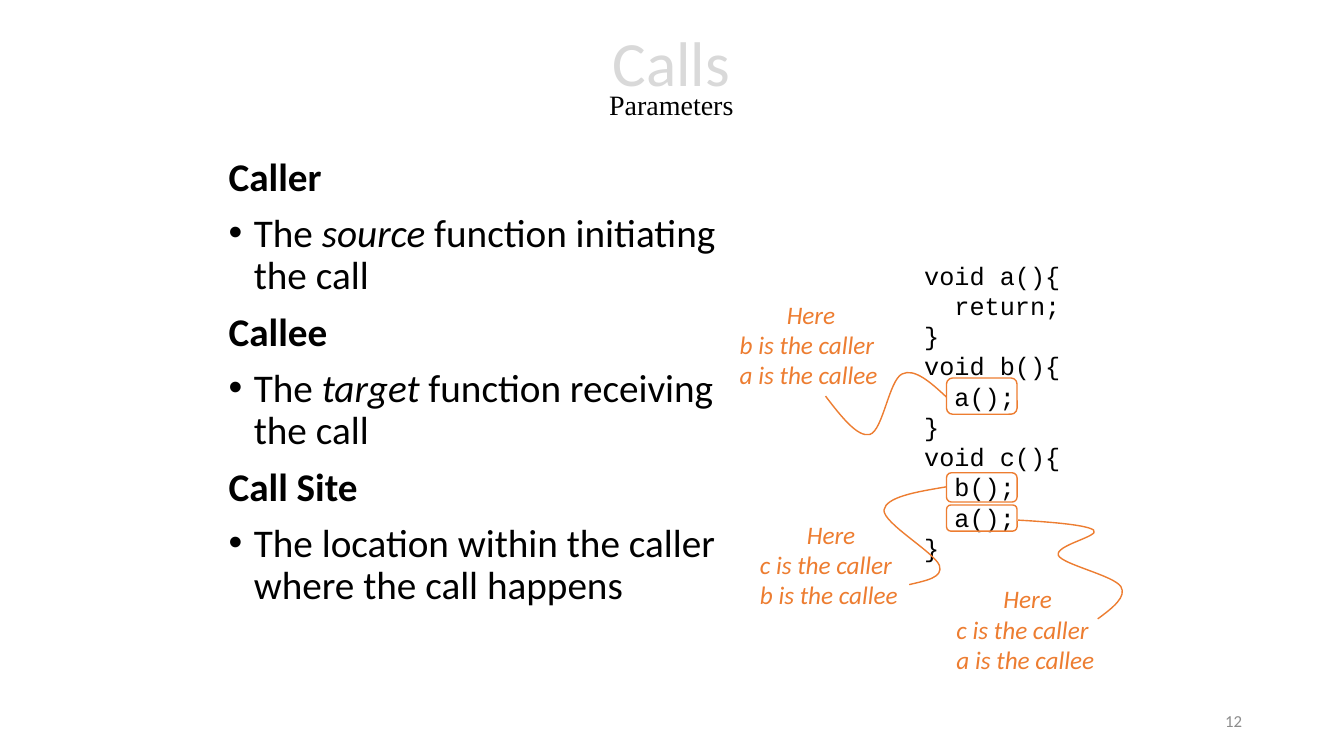
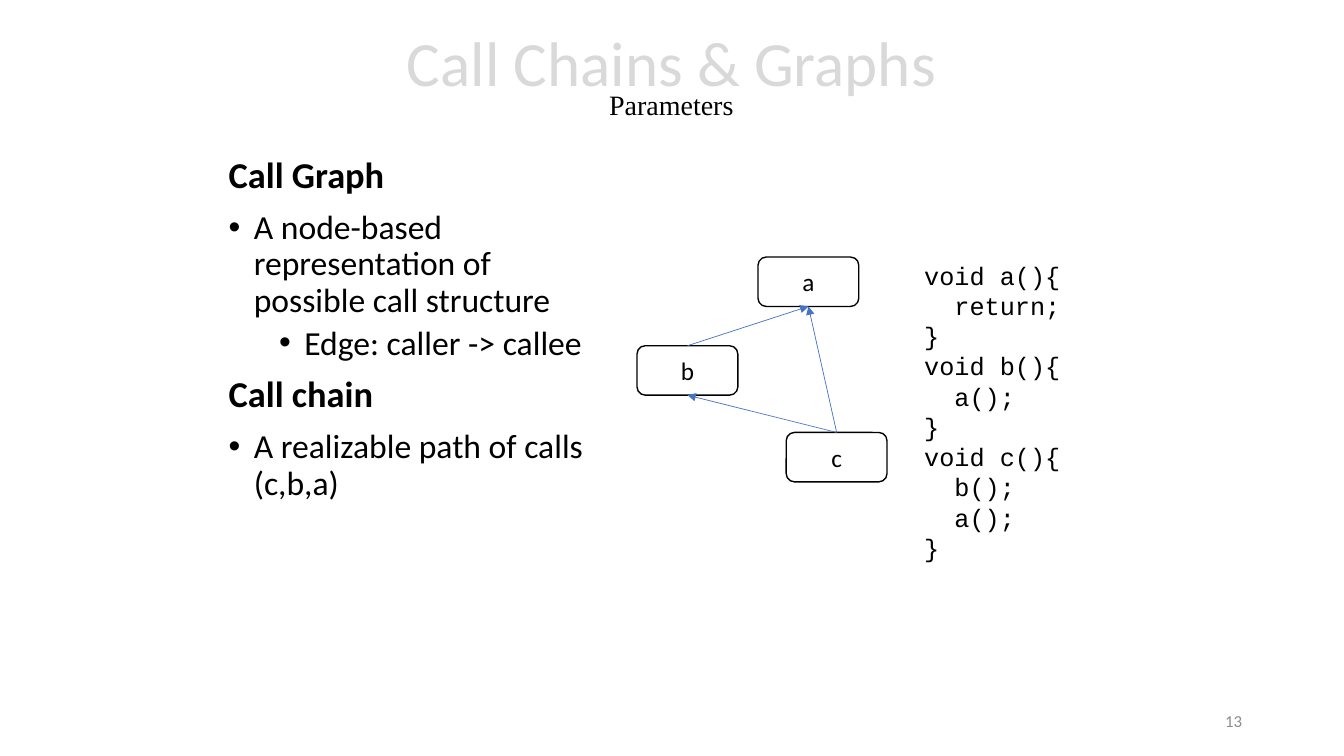
import pptx
import pptx.util
import pptx.dml.color
import pptx.enum.text
import pptx.enum.shapes
import pptx.oxml
import pptx.oxml.ns

Align = pptx.enum.text.PP_ALIGN
Anchor = pptx.enum.text.MSO_ANCHOR
Shape = pptx.enum.shapes.MSO_SHAPE
qn = pptx.oxml.ns.qn

INK, PALE, GREY = "000000", "D9D9D9", "8C8C8C"
WHITE, ACCENT, BLUE = "FFFFFF", "ED7D31", "4472C4"
SANS, SERIF, MONO = "Calibri", "Times New Roman", "Courier New"

TAB = {"indent": 3}
CODE = ["void a(){", ("return;", TAB), "}",
        "void b(){", ("a();", TAB), "}",
        "void c(){", ("b();", TAB), ("a();", TAB), "}"]


def unit(count):
    return pptx.util.Inches(count / 10)


def tint(code):
    return pptx.dml.color.RGBColor.from_string(code)


def node(parent, tag, **attrs):
    child = parent.makeelement(qn(tag), attrs)
    parent.append(child)
    return child


def write(frame, lines, **base):
    frame.word_wrap = True
    frame.vertical_anchor = base.get("anchor", Anchor.TOP)
    for num, line in enumerate(lines):
        words, extra = (line, {}) if isinstance(line, str) else line
        look = {**base, **extra}
        para = frame.add_paragraph() if num else frame.paragraphs[0]
        para.alignment = look.get("align", Align.LEFT)
        para.line_spacing = look.get("lead", 1.0)
        para.space_before = pptx.util.Pt(look.get("before", 0))
        props = para._p.get_or_add_pPr()
        props.set("marL", str(unit(look.get("indent", 0))))
        if look.get("bullet"):
            props.set("indent", str(unit(-2.5)))
            node(props, "a:buFont", typeface="Arial")
            node(props, "a:buChar", char="•")
        for pos, part in enumerate(words.split("*")):
            run = para.add_run()
            run.text = part
            font = run.font
            font.name = look.get("font", SANS)
            font.size = pptx.util.Pt(look.get("size", 18))
            font.bold = look.get("bold", False)
            font.italic = look.get("italic", False) or pos % 2 == 1
            font.color.rgb = tint(look.get("color", INK))


class Deck:
    """Hold the shared style and the current slide, on a grid of tenths of an inch."""

    def __init__(self, first):
        self.file = pptx.Presentation()
        self.file.slide_width, self.file.slide_height = unit(133.33), unit(75)
        self.num = first

    def page(self, title):
        self.slide = self.file.slides.add_slide(self.file.slide_layouts[6])
        self.shapes = self.slide.shapes
        self.text((23.5, 0.9, 86.2, 14.5),
                  [(title, {"size": 45, "color": PALE}),
                   ("Parameters", {"size": 20, "font": SERIF})],
                  align=Align.CENTER, anchor=Anchor.MIDDLE, lead=0.7)
        self.text((94.2, 69.5, 30, 4), [str(self.num)], size=12, color=GREY,
                  align=Align.RIGHT, anchor=Anchor.MIDDLE)
        self.num += 1

    def text(self, area, lines, **look):
        box = self.shapes.add_textbox(*map(unit, area))
        write(box.text_frame, lines, **look)

    def body(self, width, lines, **look):
        self.text((21.7, 15.1, width, 54.2), lines, lead=0.9, before=10, **look)

    def code(self):
        self.text((90.7, 25.3, 18, 31.3), CODE, font=MONO)

    def note(self, left, top, caller, callee):
        self.text((left, top, 16.1, 10.1),
                  [("Here", {"align": Align.CENTER}),
                   f"{caller} is the caller", f"{callee} is the callee"],
                  italic=True, color=ACCENT)

    def pen(self, shape, color, width=1):
        shape.line.color.rgb = tint(color)
        shape.line.width = pptx.util.Pt(width)

    def box(self, area, color, fill=None, label=None):
        shape = self.shapes.add_shape(Shape.ROUNDED_RECTANGLE, *map(unit, area))
        shape.shadow.inherit = False
        self.pen(shape, color)
        if fill:
            shape.fill.solid()
            shape.fill.fore_color.rgb = tint(fill)
        else:
            shape.fill.background()
        if label:
            write(shape.text_frame, [label], align=Align.CENTER, anchor=Anchor.MIDDLE)
        return shape

    def curve(self, start, *points):
        form = self.shapes.build_freeform(*map(unit, start), scale=1.0)
        form.add_line_segments([tuple(map(unit, spot)) for spot in points], close=False)
        shape = form.convert_to_shape()
        shape.shadow.inherit = False
        shape.fill.background()
        self.pen(shape, ACCENT)
        steps = list(shape.element.iter(qn("a:lnTo")))
        for pos in range(0, len(steps), 3):
            bend = node(steps[pos].getparent(), "a:cubicBezTo")
            for step in steps[pos:pos + 3]:
                bend.append(step[0])
                step.getparent().remove(step)

    def edge(self, tail, head):
        line = self.shapes.add_connector(
            pptx.enum.shapes.MSO_CONNECTOR.STRAIGHT, 0, 0, 0, 0)
        line.begin_connect(tail, 0)
        line.end_connect(head, 2)
        self.pen(line, BLUE, 0.5)
        node(line.line._get_or_add_ln(), "a:tailEnd", type="triangle")
        node(line.element.spPr, "a:effectLst")


def calls(deck):
    head, item = {"bold": True}, {"bullet": True, "indent": 2.5}
    deck.page("Calls")
    deck.body(50.4, [("Caller", head),
                     ("The *source* function initiating the call", item),
                     ("Callee", head),
                     ("The *target* function receiving the call", item),
                     ("Call Site", head),
                     ("The location within the caller where the call happens", item)],
              size=28)
    deck.code()
    for top, high in ((37.5, 3.6), (46.9, 2.9), (50.1, 2.6)):
        deck.box((93.9, top, 7, high), ACCENT)
    for spot in ((72.4, 29.2, "b", "a"), (74.4, 51, "c", "b"), (93.9, 57.4, "c", "a")):
        deck.note(*spot)
    deck.curve((81.9, 39.3), (83.5, 41.4), (85.1, 43.4), (86.3, 43.1),
               (87.6, 42.7), (88.2, 37.7), (89.5, 37.1),
               (90.7, 36.5), (92.3, 37.9), (93.9, 39.4))
    deck.curve((93.9, 48.3), (90.9, 48.8), (87.9, 49.3), (87.7, 50.6),
               (87.6, 51.9), (92.7, 54.8), (93.2, 56.1),
               (93.6, 57.3), (91.9, 57.6), (90.2, 58))
    deck.curve((108.9, 61.4), (110.4, 60.3), (111.8, 59.2), (111.2, 58.2),
               (110.5, 57.1), (105.4, 56), (105, 55.1),
               (104.6, 54.1), (109.2, 53.2), (108.5, 52.6),
               (107.9, 52.1), (104.5, 51.8), (101, 51.6))


def graphs(deck):
    head, item = {"bold": True, "size": 26}, {"bullet": True, "indent": 2.5}
    deck.page("Call Chains & Graphs")
    deck.body(38.8, [("Call Graph", head),
                     ("A node-based representation of possible call structure", item),
                     ("Edge: caller -> callee", {**item, "indent": 7.5, "before": 5}),
                     ("Call chain", head),
                     ("A realizable path of calls (c,b,a)", item)],
              size=24)
    deck.code()
    spots = {"a": (75.2, 25.5), "b": (63.2, 34.3), "c": (78, 42.9)}
    nodes = {name: deck.box((*spot, 10, 4.9), INK, WHITE, name)
             for name, spot in spots.items()}
    for tail, head in ("ba", "ca", "cb"):
        deck.edge(nodes[tail], nodes[head])


def main():
    deck = Deck(12)
    calls(deck)
    graphs(deck)
    deck.file.save("out.pptx")


if __name__ == "__main__":
    main()
